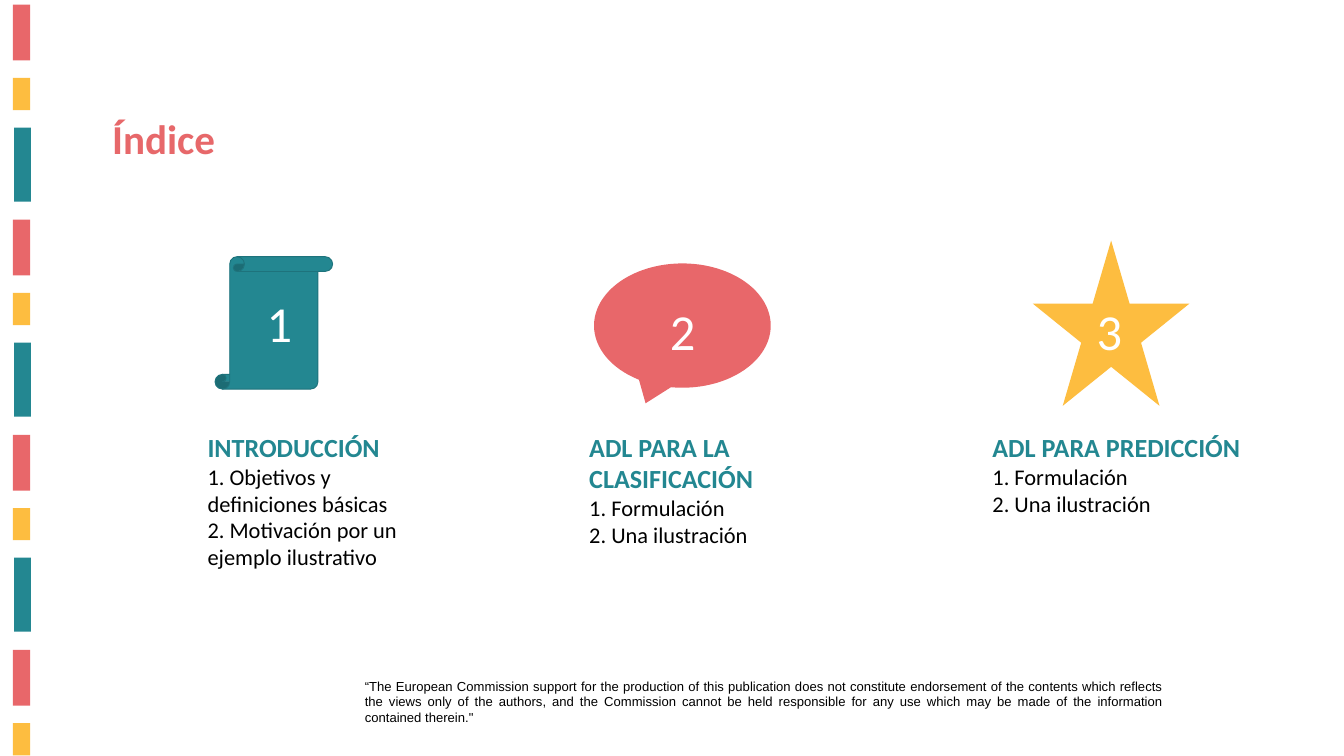
from pptx import Presentation
from pptx.dml.color import RGBColor
from pptx.enum.shapes import MSO_SHAPE
from pptx.enum.text import PP_ALIGN
from pptx.util import Inches, Pt

RED, YELLOW, TEAL = "E8676A", "FDBD40", "238791"


def color(hex_string):
    return RGBColor.from_string(hex_string)


def add_text(left, top, width, height, lines, font_name="Calibri"):
    """Add a text box; each line is (text, size, colour, bold)."""
    box = slide.shapes.add_textbox(Inches(left), Inches(top), Inches(width), Inches(height))
    text_frame = box.text_frame
    text_frame.word_wrap = True
    text_frame.text = "\n".join(line[0] for line in lines)
    for paragraph, (_, size, hex_string, bold) in zip(text_frame.paragraphs, lines):
        font = paragraph.runs[0].font
        font.name, font.size, font.bold = font_name, Pt(size), bold
        font.color.rgb = color(hex_string)
    return text_frame


presentation = Presentation()
presentation.slide_width = Inches(20)
presentation.slide_height = Inches(11.25)
slide = presentation.slides.add_slide(presentation.slide_layouts[6])

# Striped band on the left: red, yellow and teal, repeated down the slide
stripes = [(0.19, 0.07, 0.26, 0.83, RED), (0.19, 1.16, 0.26, 0.48, YELLOW),
           (0.21, 1.9, 0.25, 1.1, TEAL)]
stripe_period = 3.2
for index in range(11):
    left, top, width, height, fill = stripes[index % 3]
    top += index // 3 * stripe_period
    shape = slide.shapes.add_shape(MSO_SHAPE.RECTANGLE, Inches(left), Inches(top),
                                   Inches(width), Inches(height))
    shape.shadow.inherit = False
    shape.fill.solid()
    shape.fill.fore_color.rgb = color(fill)
    shape.line.fill.background()

# Disclaimer
disclaimer = ("“The European Commission support for the production of this publication does not "
              "constitute endorsement of the contents which reflects the views only of the "
              "authors, and the Commission cannot be held responsible for any use which may be "
              "made of the information contained therein.\"")
text_frame = add_text(5.33, 10.04, 12.08, 0.81, [(disclaimer, 14, "000000", False)], "Arial")
text_frame.paragraphs[0].alignment = PP_ALIGN.JUSTIFY

# Title
add_text(1.57, 1.64, 6.77, 1.58, [("Índice", 44, "E7686A", True)])

# Sections: icon, number box, text box, heading and items
sections = [
    (MSO_SHAPE.VERTICAL_SCROLL, (3.2, 3.82, 1.75, 1.97), TEAL,
     (3.87, 4.3, 1.58, 1.01), (2.99, 6.37, 3.42, 3.3), "INTRODUCCIÓN",
     ["1. Objetivos y definiciones básicas", "2. Motivación por un ejemplo ilustrativo"]),
    (MSO_SHAPE.OVAL_CALLOUT, (8.84, 3.92, 2.63, 1.85), RED,
     (9.87, 4.41, 1.08, 1.01), (8.67, 6.37, 4.55, 2.56), "ADL PARA LA CLASIFICACIÓN",
     ["1. Formulación", "2. Una ilustración"]),
    (MSO_SHAPE.STAR_5_POINT, (15.37, 3.58, 2.33, 2.46), YELLOW,
     (16.22, 4.41, 1.5, 1.01), (14.67, 6.37, 4.9, 1.78), "ADL PARA PREDICCIÓN",
     ["1. Formulación", "2. Una ilustración"]),
]
for number, (icon, icon_box, fill, number_box, text_box, heading, items) in enumerate(sections, 1):
    shape = slide.shapes.add_shape(icon, *(Inches(length) for length in icon_box))
    shape.shadow.inherit = False
    shape.fill.solid()
    shape.fill.fore_color.rgb = color(fill)
    if icon == MSO_SHAPE.VERTICAL_SCROLL:
        shape.line.color.rgb = color("1E737C")
        shape.line.width = Pt(1)
    else:
        shape.line.fill.background()
    add_text(*number_box, [(str(number), 54, "FFFFFF", False)])
    add_text(*text_box, [(heading, 28, TEAL, True)]
             + [(item, 24, "000000", False) for item in items])

presentation.save("out.pptx")
